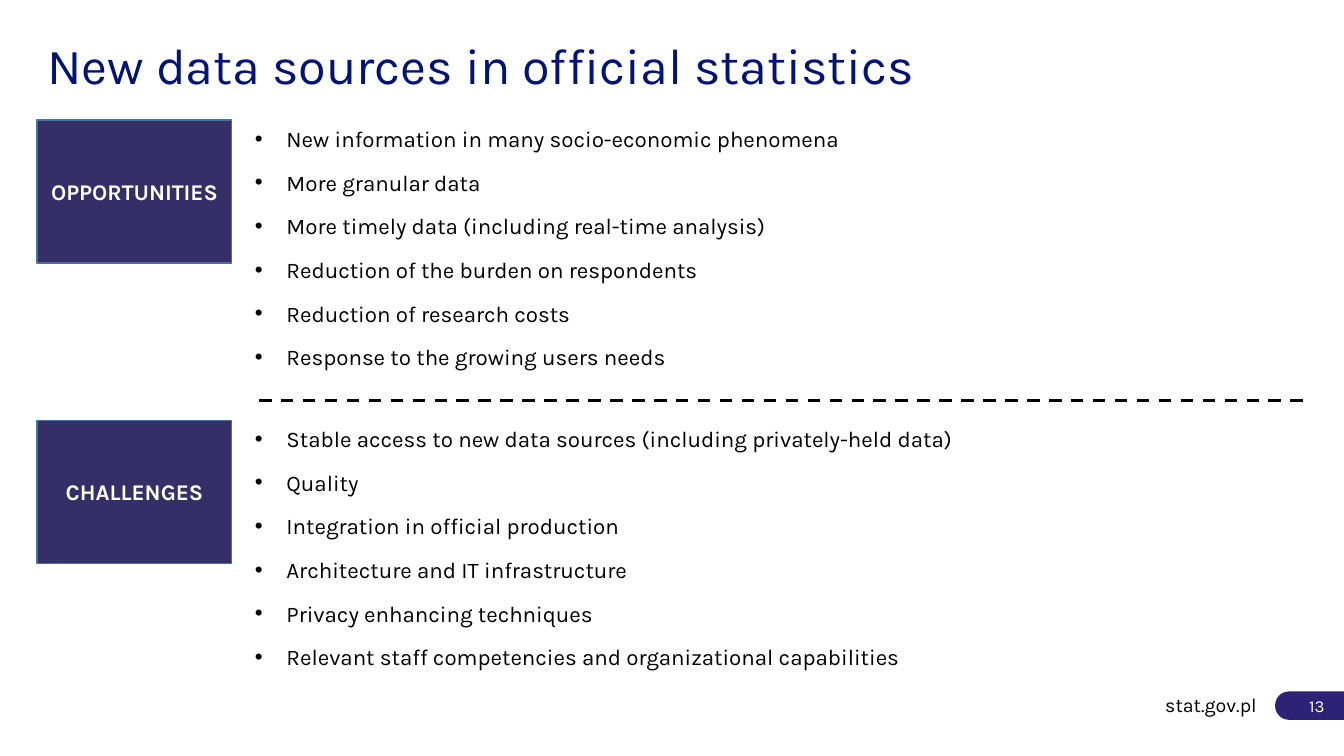
import pptx
import pptx.util
import pptx.dml.color
import pptx.enum.dml
import pptx.enum.shapes
import pptx.enum.text
import pptx.oxml
import pptx.oxml.ns

Pt = pptx.util.Pt
Align = pptx.enum.text.PP_ALIGN
Anchor = pptx.enum.text.MSO_ANCHOR
Kind = pptx.enum.shapes.MSO_SHAPE

# Content
TITLE = "New data sources in official statistics"
GROUPS = [
    ("OPPORTUNITIES", [
        "New information in many socio-economic phenomena",
        "More granular data",
        "More timely data (including real-time analysis)",
        "Reduction of the burden on respondents",
        "Reduction of research costs",
        "Response to the growing users needs",
    ]),
    ("CHALLENGES", [
        "Stable access to new data sources (including privately-held data)",
        "Quality",
        "Integration in official production",
        "Architecture and IT infrastructure",
        "Privacy enhancing techniques",
        "Relevant staff competencies and organizational capabilities",
    ]),
]
SITE = "stat.gov.pl"
PAGE = "13"

# Layout in points
LEFT, TOP, STEP = 26.6, 85.8, 214.4
BOX_W, BOX_H = 139, 102.2
LIST_X, LIST_W, LIST_H = 175, 730, 190
RULE_X, RULE_END, RULE_Y = 185, 933.8, 285.8
INDENT, GAP = 22.5, 12

# Formats
HEAD = {"size": Pt(36), "color": "001377"}
LABEL = {"size": Pt(16), "color": "FFFFFF", "bold": True}
ITEM = {"size": Pt(16), "color": "000000"}
FOOT = {"size": Pt(14), "color": "000000"}
NUM = {"size": Pt(12), "color": "FFFFFF"}


def paint(target, tint):
    target.rgb = pptx.dml.color.RGBColor.from_string(tint)


def style(para, form):
    para.font.name = "Karla"
    for key, value in form.items():
        if key == "color":
            paint(para.font.color, value)
        else:
            setattr(para.font, key, value)


def write(shape, lines, form, align, anchor, inset=(7.2, 3.6, 7.2, 3.6), dots=False):
    frame = shape.text_frame
    frame.word_wrap = True
    frame.auto_size = pptx.enum.text.MSO_AUTO_SIZE.NONE
    frame.vertical_anchor = anchor
    for side, size in zip(("left", "top", "right", "bottom"), inset):
        setattr(frame, "margin_" + side, Pt(size))
    frame.text = "\n".join(lines)
    for para in frame.paragraphs:
        para.alignment = align
        if dots:
            bullet(para)
        style(para, form)


def bullet(para):
    para.space_after = Pt(GAP)
    props = para._p.get_or_add_pPr()
    props.set("marL", str(Pt(INDENT)))
    props.set("indent", str(-Pt(INDENT)))
    for tag, name, value in (("a:buFont", "typeface", "Arial"),
                             ("a:buChar", "char", "•")):
        mark = pptx.oxml.ns.qn(tag)
        props.append(props.makeelement(mark, {name: value}))


def block(kind, place, fill, edge=None):
    shape = slide.shapes.add_shape(kind, *map(Pt, place))
    shape.shadow.inherit = False
    shape.fill.solid()
    paint(shape.fill.fore_color, fill)
    if edge:
        paint(shape.line.color, edge)
        shape.line.width = Pt(1)
    else:
        shape.line.fill.background()
    return shape


def textbox(*place):
    return slide.shapes.add_textbox(*map(Pt, place))


deck = pptx.Presentation()
deck.slide_width, deck.slide_height = Pt(960), Pt(540)
slide = deck.slides.add_slide(deck.slide_layouts[5])

# Title
title = slide.shapes.title
title.left, title.top, title.width, title.height = map(Pt, (LEFT, 15.1, 907, 57))
write(title, [TITLE], HEAD, Align.LEFT, Anchor.BOTTOM)
title.text_frame.paragraphs[0].line_spacing = 0.9

# Label boxes with their lists
for row, (name, items) in enumerate(GROUPS):
    y = TOP + row * STEP
    box = block(Kind.RECTANGLE, (LEFT, y, BOX_W, BOX_H), "352F67", "43739E")
    write(box, [name], LABEL, Align.CENTER, Anchor.MIDDLE)
    write(textbox(LIST_X, y, LIST_W, LIST_H), items, ITEM,
          Align.LEFT, Anchor.TOP, dots=True)

# Dashed rule between the groups
rule = slide.shapes.add_connector(
    pptx.enum.shapes.MSO_CONNECTOR.STRAIGHT,
    *map(Pt, (RULE_X, RULE_Y, RULE_END, RULE_Y)))
paint(rule.line.color, "000000")
rule.line.width = Pt(2.25)
rule.line.dash_style = pptx.enum.dml.MSO_LINE.DASH
props = rule._element.spPr
props.append(props.makeelement(pptx.oxml.ns.qn("a:effectLst"), {}))

# Footer
write(textbox(200.9, 482.4, 704, 42.5), [SITE], FOOT,
      Align.RIGHT, Anchor.MIDDLE, (0, 3.6, 7.2, 3.6))
tab = block(Kind.FLOWCHART_TERMINATOR, (910.8, 493.9, 59.8, 20.2), "2C2276")
write(tab, [PAGE], NUM, Align.RIGHT, Anchor.MIDDLE, (2.9, 3.6, 21.6, 3.6))

deck.save("out.pptx")
